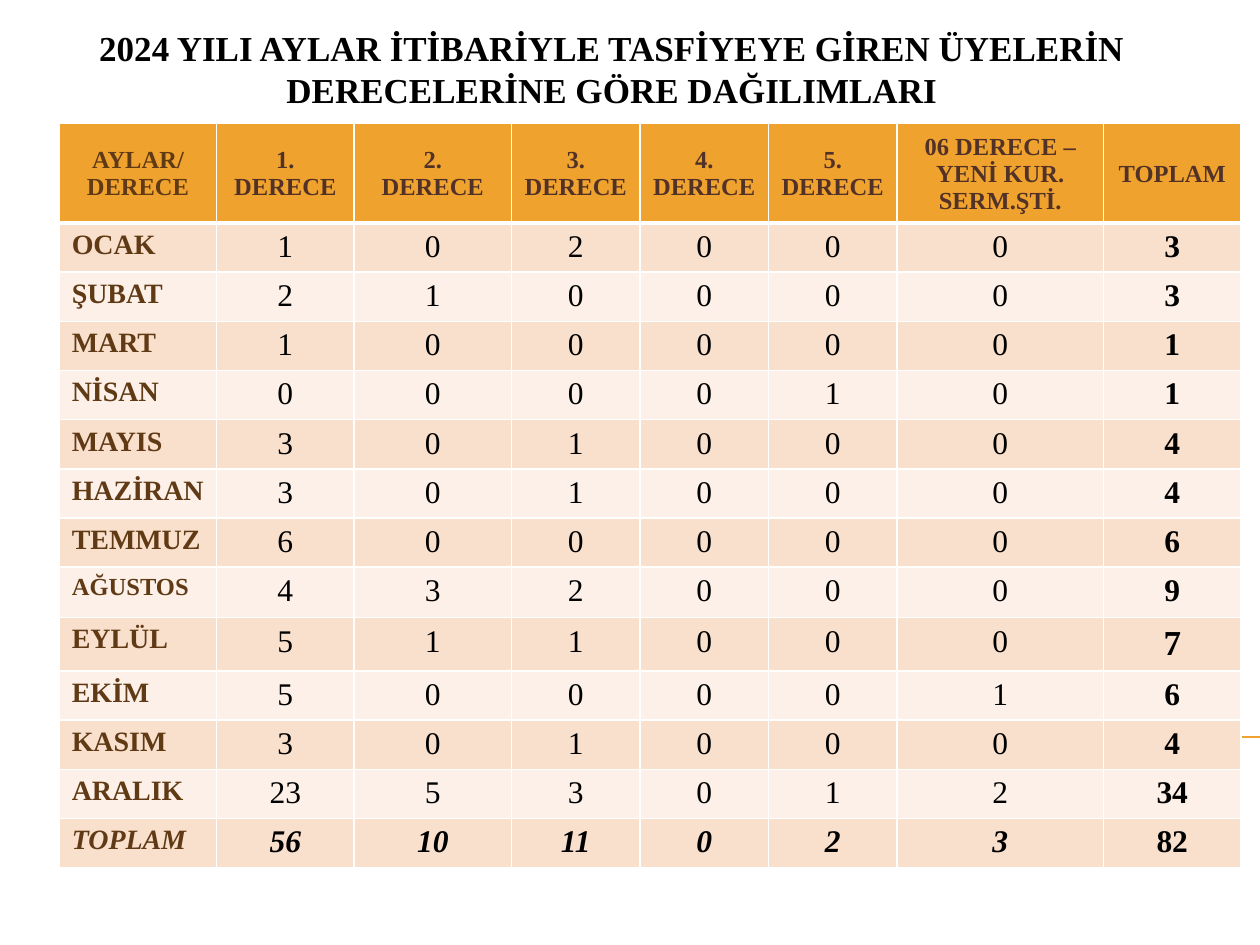
from lxml import etree
from pptx import Presentation
from pptx import util as u
from pptx.dml.color import RGBColor
from pptx.enum import shapes, text
from pptx.oxml.ns import qn

COLORS = {
    "orange": "F0A22E",
    "band_dark": "F9E0CD",
    "band_light": "FCF0E8",
    "brown": "603A14",
    "header_brown": "523227",
    "black": "000000",
    "white": "FFFFFF",
}

HEADERS = ["AYLAR/ DERECE", "1.\nDERECE", "2.\nDERECE", "3. DERECE", "4. DERECE",
           "5. DERECE", "06 DERECE – YENİ KUR. SERM.ŞTİ.", "TOPLAM"]
MONTHS = [
    ("OCAK", 1, 0, 2, 0, 0, 0, 3),
    ("ŞUBAT", 2, 1, 0, 0, 0, 0, 3),
    ("MART", 1, 0, 0, 0, 0, 0, 1),
    ("NİSAN", 0, 0, 0, 0, 1, 0, 1),
    ("MAYIS", 3, 0, 1, 0, 0, 0, 4),
    ("HAZİRAN", 3, 0, 1, 0, 0, 0, 4),
    ("TEMMUZ", 6, 0, 0, 0, 0, 0, 6),
    ("AĞUSTOS", 4, 3, 2, 0, 0, 0, 9),
    ("EYLÜL", 5, 1, 1, 0, 0, 0, 7),
    ("EKİM", 5, 0, 0, 0, 0, 1, 6),
    ("KASIM", 3, 0, 1, 0, 0, 0, 4),
    ("ARALIK", 23, 5, 3, 0, 1, 2, 34),
    ("TOPLAM", 56, 10, 11, 0, 2, 3, 82),
]
COLUMN_WIDTHS = [1.25, 1.09, 1.25, 1.02, 1.02, 1.02, 1.64, 1.09]
ROW_HEIGHTS = [0.76] + [0.38] * 7 + [0.4, 0.41] + [0.38] * 4
SPECIAL_SIZES = {("AĞUSTOS", 0): 14, ("EYLÜL", 7): 20}


class SlideBuilder:
    """Holds the style and the current slide."""

    font_name = "Times New Roman"

    def __init__(self, slide):
        self.slide = slide

    def color(self, name):
        return RGBColor.from_string(COLORS[name])

    def set_text(self, frame, content, size, color, bold=True, italic=False, centered=True):
        frame.text = content
        for paragraph in frame.paragraphs:
            paragraph.alignment = text.PP_ALIGN.CENTER if centered else text.PP_ALIGN.LEFT
            font = paragraph.font
            font.name, font.size = self.font_name, u.Pt(size)
            font.bold, font.italic = bold, italic
            font.color.rgb = self.color(color)

    def line(self, x1, y1, x2, y2, color, width):
        connector = self.slide.shapes.add_connector(
            shapes.MSO_CONNECTOR.STRAIGHT,
            u.Inches(x1), u.Inches(y1), u.Inches(x2), u.Inches(y2))
        connector.line.color.rgb = self.color(color)
        connector.line.width = u.Pt(width)
        etree.SubElement(connector._element.spPr, qn("a:effectLst"))

    def title(self, left, top, width, height, content):
        box = self.slide.shapes.add_textbox(
            u.Inches(left), u.Inches(top), u.Inches(width), u.Inches(height))
        box.text_frame.word_wrap = True
        self.set_text(box.text_frame, content, 20, "black")

    def table(self, left, top, widths, heights):
        frame = self.slide.shapes.add_table(
            len(heights), len(widths), u.Inches(left), u.Inches(top),
            u.Inches(sum(widths)), u.Inches(sum(heights)))
        table = frame.table
        for column, width in zip(table.columns, widths):
            column.width = u.Inches(width)
        for row, height in zip(table.rows, heights):
            row.height = u.Inches(height)
        return table

    def cell(self, cell, content, fill, borders, anchor, **style):
        cell.margin_top, cell.margin_bottom = u.Inches(0.05), u.Inches(0.04)
        cell.vertical_anchor = anchor
        self.set_text(cell.text_frame, content, **style)
        properties = cell._tc.get_or_add_tcPr()
        for side, width in borders.items():
            border = etree.SubElement(properties, qn(f"a:ln{side}"), w=str(u.Pt(width)))
            solid = etree.SubElement(border, qn("a:solidFill"))
            etree.SubElement(solid, qn("a:srgbClr"), val=COLORS["white"])
        cell.fill.solid()
        cell.fill.fore_color.rgb = self.color(fill)


def main():
    presentation = Presentation()
    presentation.slide_width, presentation.slide_height = u.Inches(10), u.Inches(7.5)
    builder = SlideBuilder(presentation.slides.add_slide(presentation.slide_layouts[6]))

    # Rule behind the table, then the title
    builder.line(0.56, 5.85, 10, 5.85, "orange", 0.75)
    builder.title(0.23, 0.16, 9.25, 0.63,
                  "2024 YILI AYLAR İTİBARİYLE TASFİYEYE GİREN ÜYELERİN "
                  "DERECELERİNE GÖRE DAĞILIMLARI")

    # Table header
    table = builder.table(0.47, 0.98, COLUMN_WIDTHS, ROW_HEIGHTS)
    thin = {"L": 1, "R": 1, "T": 1, "B": 1}
    for column, header in enumerate(HEADERS):
        builder.cell(table.cell(0, column), header, "orange", {**thin, "B": 3},
                     text.MSO_ANCHOR.MIDDLE, size=14,
                     color="header_brown" if column else "brown")

    # Months and totals in banded rows
    last_column = len(HEADERS) - 1
    for row, values in enumerate(MONTHS, start=1):
        month = values[0]
        is_total = row == len(MONTHS)
        borders = {**thin, "T": 3} if row == 1 else thin
        for column, value in enumerate(values):
            is_label = column == 0
            builder.cell(
                table.cell(row, column), str(value),
                "band_dark" if row % 2 else "band_light", borders,
                text.MSO_ANCHOR.TOP,
                size=SPECIAL_SIZES.get((month, column), 16 if is_label else 18),
                color="brown" if is_label else "black",
                bold=is_label or is_total or column == last_column,
                italic=is_total and column != last_column,
                centered=not is_label)

    presentation.save("out.pptx")


if __name__ == "__main__":
    main()
